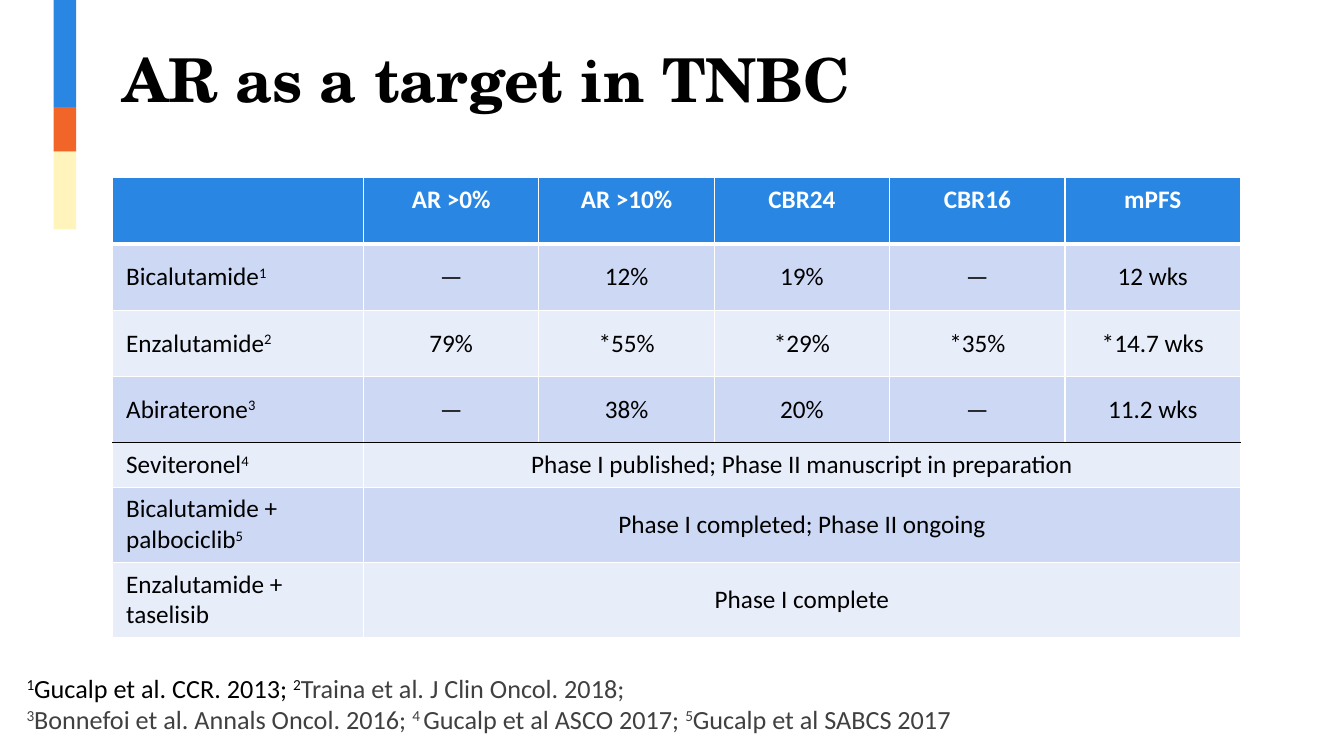
import pptx
import pptx.util
import pptx.dml.color
import pptx.enum.shapes
import pptx.enum.text
import pptx.oxml
import pptx.oxml.ns

Cm = pptx.util.Cm
Pt = pptx.util.Pt
Align = pptx.enum.text.PP_ALIGN
Anchor = pptx.enum.text.MSO_ANCHOR
Fit = pptx.enum.text.MSO_AUTO_SIZE


class Theme:
    blue, orange, cream = "2986E2", "F26529", "FFF5BC"
    dark, light = "CDD9F4", "E8EDFA"
    black, white, gray = "000000", "FFFFFF", "404040"
    head, body = "TeX Gyre Schola", "Calibri"
    title, cell, note = 43.2, 18, 18.7
    pad = {"margin_left": Cm(0.34), "margin_right": Cm(0.34),
           "margin_top": Cm(0.17), "margin_bottom": Cm(0.17)}


def rgb(code):
    return pptx.dml.color.RGBColor.from_string(code)


def apply(item, form):
    for name, value in form.items():
        setattr(item, name, value)


class Page:
    def __init__(self, deck, theme):
        self.theme = theme
        self.slide = deck.slides.add_slide(deck.slide_layouts[5])

    def label(self, para, text, size, color, face=None, bold=False):
        """Add runs; parts between ^ marks are raised."""
        for i, part in enumerate(text.split("^")):
            if not part:
                continue
            run = para.add_run()
            run.text = part
            apply(run.font, {"size": Pt(size), "bold": bold,
                             "name": face or self.theme.body})
            run.font.color.rgb = rgb(color)
            if i % 2:
                run._r.get_or_add_rPr().set("baseline", "30000")

    def title(self, text, box):
        shape = self.slide.shapes.title
        apply(shape, box)
        frame = shape.text_frame
        apply(frame, {"vertical_anchor": Anchor.BOTTOM, "word_wrap": True,
                      "auto_size": Fit.NONE})
        para = frame.paragraphs[0]
        para.alignment = Align.LEFT
        self.label(para, text, self.theme.title, self.theme.black,
                   self.theme.head, True)

    def bar(self, left, top, width, height, color):
        shape = self.slide.shapes.add_shape(
            pptx.enum.shapes.MSO_SHAPE.RECTANGLE,
            Cm(left), Cm(top), Cm(width), Cm(height))
        shape.shadow.inherit = False
        shape.fill.solid()
        shape.fill.fore_color.rgb = rgb(color)
        shape.line.fill.background()

    def edge(self, cell, sides):
        props = cell._tc.get_or_add_tcPr()
        for i, (side, (color, width)) in enumerate(sides.items()):
            props.insert(i, pptx.oxml.parse_xml(
                f'<a:ln{side} {pptx.oxml.ns.nsdecls("a")} w="{Pt(width)}">'
                f'<a:solidFill><a:srgbClr val="{color}"/></a:solidFill>'
                f'</a:ln{side}>'))

    def table(self, rows, left, top, wides, highs, rules):
        """Rows with two entries span their second one to the right edge."""
        look = self.theme
        grid = self.slide.shapes.add_table(
            len(rows), len(wides), Cm(left), Cm(top),
            Cm(sum(wides)), Cm(sum(highs))).table
        for col, wide in zip(grid.columns, wides):
            col.width = Cm(wide)
        thin = (look.white, 1)
        for r, texts in enumerate(rows):
            grid.rows[r].height = Cm(highs[r])
            first = r == 0
            fill = look.blue if first else (look.light, look.dark)[r % 2]
            for c in range(len(wides)):
                cell = grid.cell(r, c)
                apply(cell, look.pad)
                cell.vertical_anchor = Anchor.TOP if first else Anchor.MIDDLE
                cell.fill.solid()
                cell.fill.fore_color.rgb = rgb(fill)
                self.edge(cell, {"L": thin, "R": thin,
                                 "T": rules.get(r - 1, thin),
                                 "B": rules.get(r, thin)})
                if c < len(texts):
                    para = cell.text_frame.paragraphs[0]
                    para.alignment = Align.CENTER if c else Align.LEFT
                    self.label(para, texts[c], look.cell,
                               look.white if first else look.black, bold=first)
            if len(texts) == 2:
                grid.cell(r, 1).merge(grid.cell(r, len(wides) - 1))

    def notes(self, lines, left, top, width, height):
        frame = self.slide.shapes.add_textbox(
            Cm(left), Cm(top), Cm(width), Cm(height)).text_frame
        apply(frame, {**self.theme.pad, "word_wrap": True,
                      "auto_size": Fit.SHAPE_TO_FIT_TEXT})
        for i, line in enumerate(lines):
            para = frame.add_paragraph() if i else frame.paragraphs[0]
            for text, color in line:
                self.label(para, text, self.theme.note, color)


def main():
    deck = pptx.Presentation()
    apply(deck, {"slide_width": Cm(33.87), "slide_height": Cm(19.05)})
    look = Theme()
    page = Page(deck, look)

    # Colour strip
    top = 0
    for high, color in ((2.7, look.blue), (1.12, look.orange),
                        (1.96, look.cream)):
        page.bar(1.35, top, 0.57, high, color)
        top += high

    # Title
    page.title("AR as a target in TNBC", {
        "left": Cm(2.84), "top": Cm(0.84),
        "width": Cm(28.45), "height": Cm(2.18)})

    # Trial results
    rows = [
        ["", "AR >0%", "AR >10%", "CBR24", "CBR16", "mPFS"],
        ["Bicalutamide^1^", "—", "12%", "19%", "—", "12 wks"],
        ["Enzalutamide^2^", "79%", "*55%", "*29%", "*35%", "*14.7 wks"],
        ["Abiraterone^3^", "—", "38%", "20%", "—", "11.2 wks"],
        ["Seviteronel^4^",
         "Phase I published; Phase II manuscript in preparation"],
        ["Bicalutamide + palbociclib^5^",
         "Phase I completed; Phase II ongoing"],
        ["Enzalutamide + taselisib", "Phase I complete"],
    ]
    page.table(rows, 2.84, 4.48, [6.32] + [4.42] * 5,
               [1.67] * 4 + [1.02] + [1.73] * 2,
               {0: (look.white, 3), 3: (look.black, 1)})

    # References
    page.notes([
        [("^1^Gucalp et al. CCR. 2013; ^2^", look.black),
         ("Traina et al. J Clin Oncol. 2018;", look.gray)],
        [("^3^Bonnefoi et al. Annals Oncol. 2016; ^4 ^Gucalp et al ASCO 2017; "
          "^5^Gucalp et al SABCS 2017", look.gray)],
    ], 0.33, 16.76, 27.94, 1.93)

    deck.save("out.pptx")


if __name__ == "__main__":
    main()
